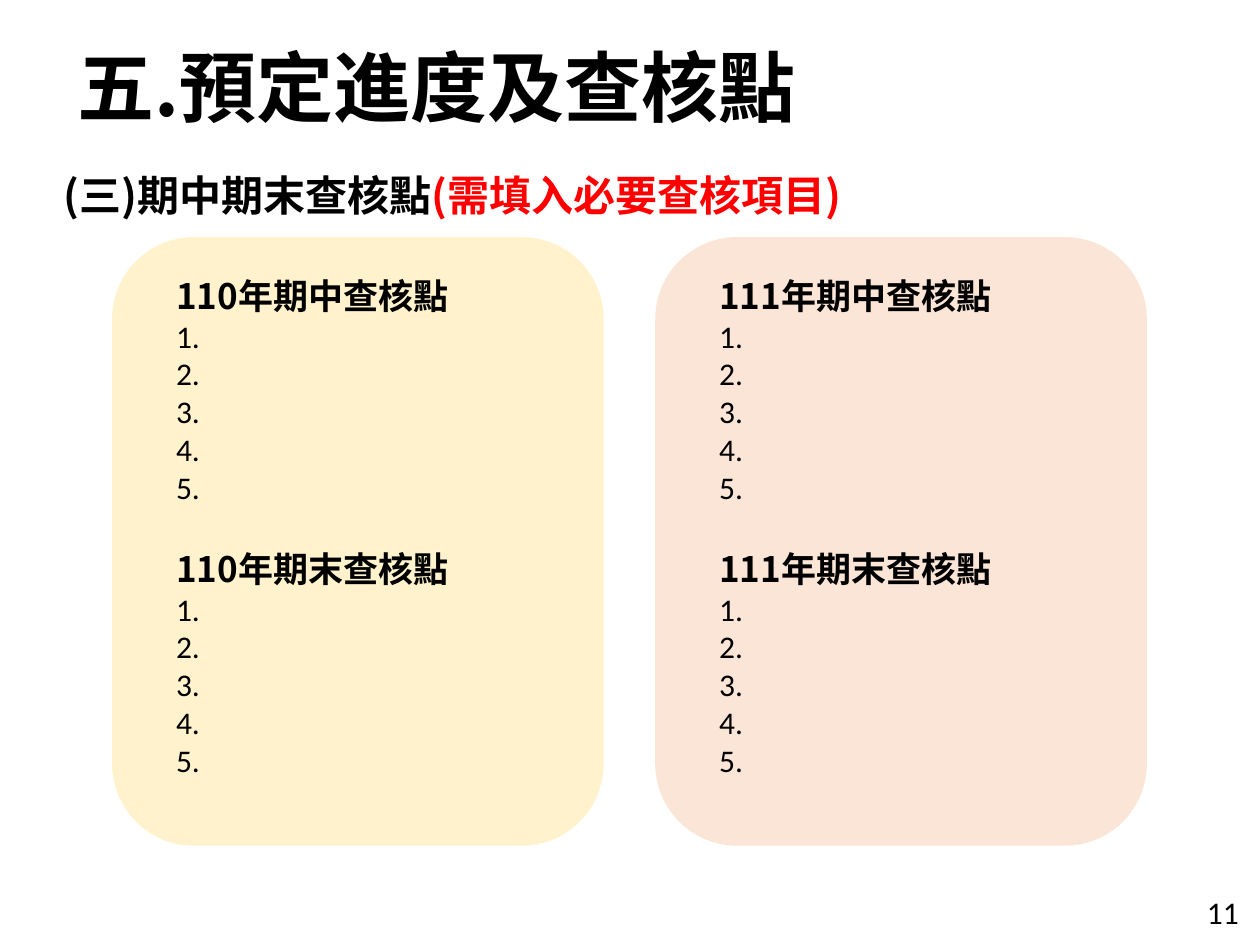
from pptx import Presentation
from pptx.dml.color import RGBColor
from pptx.enum.shapes import MSO_SHAPE
from pptx.oxml.ns import qn
from pptx.util import Cm, Pt
from lxml import etree

ROUNDED = MSO_SHAPE.ROUNDED_RECTANGLE
BLACK = RGBColor(0x00, 0x00, 0x00)
RED = RGBColor(0xFF, 0x00, 0x00)
CREAM = RGBColor(0xFF, 0xF2, 0xCC)
PEACH = RGBColor(0xFB, 0xE5, 0xD6)
CJK = "Noto Sans CJK SC"
LATIN = "Calibri"

TITLE = "五.預定進度及查核點"
SUBTITLE = [("(三)期中期末查核點", BLACK), ("(需填入必要查核項目)", RED)]
YEARS = [("110", CREAM), ("111", PEACH)]
TERMS = ["期中", "期末"]
ITEM_COUNT = 5
PAGE_NUMBER = "11"

# Panel grid, in cm
PANEL_LEFT, PANEL_TOP = 2.26, 4.78
PANEL_WIDTH, PANEL_HEIGHT = 9.91, 12.27
PANEL_STEP = 10.95
TEXT_INSET_X, TEXT_INSET_Y = 1.04, 0.63


def add_text_frame(s, left, top, width, height):
    tf = s.shapes.add_textbox(Cm(left), Cm(top), Cm(width), Cm(height)).text_frame
    tf.word_wrap = True
    return tf


def add_run(p, text, size, font=CJK, color=BLACK):
    """Add a run; text in the CJK font is bold and uses it for both scripts."""
    r = p.add_run()
    r.text = text
    r.font.size = Pt(size)
    r.font.name = font
    r.font.bold = font == CJK
    r.font.color.rgb = color
    if font == CJK:
        ea = etree.SubElement(r._r.get_or_add_rPr(), qn("a:ea"))
        ea.set("typeface", font)


def add_panel(s, left, color):
    panel = s.shapes.add_shape(ROUNDED, Cm(left), Cm(PANEL_TOP),
                               Cm(PANEL_WIDTH), Cm(PANEL_HEIGHT))
    panel.shadow.inherit = False
    panel.fill.solid()
    panel.fill.fore_color.rgb = color
    panel.line.fill.background()


def add_checkpoints(s, left, year):
    tf = add_text_frame(s, left + TEXT_INSET_X, PANEL_TOP + TEXT_INSET_Y, 7.87, 10.44)
    for i, term in enumerate(TERMS):
        p = tf.add_paragraph() if i else tf.paragraphs[0]
        p.space_before = Pt(24 if i else 0)
        add_run(p, f"{year}年{term}查核點", 20)
        for number in range(1, ITEM_COUNT + 1):
            add_run(tf.add_paragraph(), f"{number}.", 18, LATIN)


prs = Presentation()
prs.slide_width, prs.slide_height = Cm(25.4), Cm(19.05)
s = prs.slides.add_slide(prs.slide_layouts[6])

p = add_text_frame(s, 1.32, -0.25, 22.73, 2.74).paragraphs[0]
p.line_spacing = 1.5
add_run(p, TITLE, 44)

p = add_text_frame(s, 1.04, 3.3, 22.1, 1.27).paragraphs[0]
for text, color in SUBTITLE:
    add_run(p, text, 24, color=color)

for column, (year, color) in enumerate(YEARS):
    left = PANEL_LEFT + column * PANEL_STEP
    add_panel(s, left, color)
    add_checkpoints(s, left, year)

p = add_text_frame(s, 24.08, 17.88, 1.32, 1.02).paragraphs[0]
add_run(p, PAGE_NUMBER, 18, LATIN)

prs.save("out.pptx")
